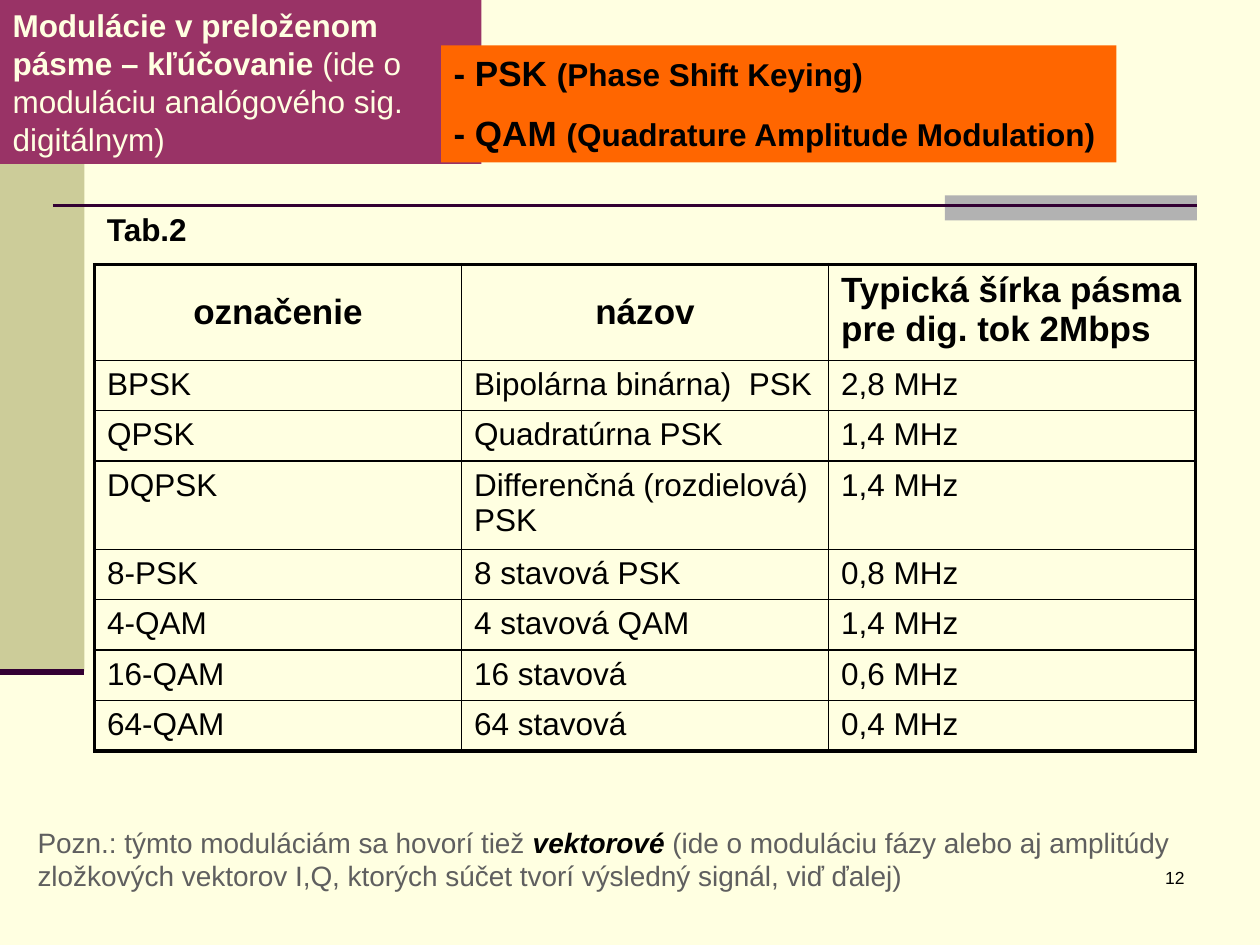
import lxml.etree
import pptx
import pptx.dml.color
import pptx.enum.shapes
import pptx.enum.text
import pptx.oxml
import pptx.oxml.ns
import pptx.util

Inches = pptx.util.Inches
Pt = pptx.util.Pt
ALIGN = pptx.enum.text.PP_ALIGN
ANCHOR = pptx.enum.text.MSO_ANCHOR

HEADER = ["označenie", "názov", "Typická šírka pásma pre dig. tok 2Mbps"]
MODULATIONS = [
    ["BPSK", "Bipolárna binárna)  PSK", "2,8 MHz"],
    ["QPSK", "Quadratúrna PSK", "1,4 MHz"],
    ["DQPSK", "Differenčná (rozdielová) PSK", "1,4 MHz"],
    ["8-PSK", "8 stavová PSK", "0,8 MHz"],
    ["4-QAM", "4 stavová QAM", "1,4 MHz"],
    ["16-QAM", "16 stavová", "0,6 MHz"],
    ["64-QAM", "64 stavová", "0,4 MHz"],
]
ROW_HEIGHTS = [0.76, 0.4, 0.4, 0.7, 0.4, 0.4, 0.4, 0.4]


def color(value):
    return pptx.dml.color.RGBColor.from_string(value)


def add_run(p, text, size=18, fill="000000", bold=False, italic=False):
    r = p.add_run()
    r.text = text
    r.font.name = "Arial"
    r.font.size = Pt(size)
    r.font.bold = bold
    r.font.italic = italic
    r.font.color.rgb = color(fill)


def set_border(cell, side, width):
    tag = "a:ln" + side
    ln = pptx.oxml.parse_xml(
        f'<{tag} {pptx.oxml.ns.nsdecls("a")} w="{Pt(width)}">'
        f'<a:solidFill><a:srgbClr val="000000"/></a:solidFill></{tag}>')
    cell._tc.get_or_add_tcPr().insert("LRTB".index(side), ln)


class SlideBuilder:
    thin, thick = 1, 2.25

    def __init__(self, prs, background):
        self.s = prs.slides.add_slide(prs.slide_layouts[1])
        self.s.background.fill.solid()
        self.s.background.fill.fore_color.rgb = color(background)

    def bar(self, x, y, w, h, fill):
        sp = self.s.shapes.add_shape(
            pptx.enum.shapes.MSO_SHAPE.RECTANGLE,
            Inches(x), Inches(y), Inches(w), Inches(h))
        sp.shadow.inherit = False
        sp.fill.solid()
        sp.fill.fore_color.rgb = color(fill)
        sp.line.fill.background()

    def rule(self, x1, x2, y, width):
        """Draw a horizontal line."""
        line = self.s.shapes.add_connector(
            pptx.enum.shapes.MSO_CONNECTOR.STRAIGHT,
            Inches(x1), Inches(y), Inches(x2), Inches(y))
        line.line.color.rgb = color("330033")
        line.line.width = Pt(width)
        lxml.etree.SubElement(line._element.spPr, pptx.oxml.ns.qn("a:effectLst"))

    def fill_text(self, tf, paragraphs, align=ALIGN.LEFT):
        """Fill a text frame; each paragraph is a list of (text, format) runs."""
        tf.word_wrap = True
        tf.auto_size = pptx.enum.text.MSO_AUTO_SIZE.NONE
        tf.vertical_anchor = ANCHOR.TOP
        for i, runs in enumerate(paragraphs):
            p = tf.add_paragraph() if i else tf.paragraphs[0]
            p.alignment = align
            p.space_before = Pt(10 if i else 0)
            for text, style in runs:
                add_run(p, text, **style)

    def text(self, x, y, w, h, runs, align=ALIGN.LEFT):
        box = self.s.shapes.add_textbox(Inches(x), Inches(y), Inches(w), Inches(h))
        self.fill_text(box.text_frame, [runs], align)

    def placeholder(self, index, x, y, w, h, fill, paragraphs):
        """Place and fill a placeholder in front of what is already drawn."""
        sp = self.s.placeholders[index]
        sp.left, sp.top, sp.width, sp.height = map(Inches, (x, y, w, h))
        sp.fill.solid()
        sp.fill.fore_color.rgb = color(fill)
        self.fill_text(sp.text_frame, paragraphs)
        for p in sp.text_frame.paragraphs:
            pPr = p._p.get_or_add_pPr()
            pPr.set("marL", "0")
            pPr.set("indent", "0")
            lxml.etree.SubElement(pPr, pptx.oxml.ns.qn("a:buNone"))
        self.s.shapes._spTree.append(sp._element)

    def table(self, x, y, w, rows, heights):
        n_rows, n_cols = len(rows), len(rows[0])
        table = self.s.shapes.add_table(
            n_rows, n_cols, Inches(x), Inches(y), Inches(w),
            Inches(sum(heights))).table
        table.first_row = table.horz_banding = False
        for row, height in zip(table.rows, heights):
            row.height = Inches(height)
        for i, row in enumerate(rows):
            for j, text in enumerate(row):
                cell = table.cell(i, j)
                cell.fill.background()
                p = cell.text_frame.paragraphs[0]
                add_run(p, text, size=18 if i else 20, bold=i == 0)
                if i == 0 and j < n_cols - 1:
                    p.alignment = ALIGN.CENTER
                    cell.vertical_anchor = ANCHOR.MIDDLE
                outer = {"L": j == 0, "R": j == n_cols - 1,
                         "T": i == 0, "B": i == n_rows - 1}
                for side, is_outer in outer.items():
                    set_border(cell, side, self.thick if is_outer else self.thin)


def main():
    prs = pptx.Presentation()
    prs.slide_width, prs.slide_height = Inches(10), Inches(7.5)
    b = SlideBuilder(prs, "FFFFE1")

    b.bar(0, 0, 0.67, 5.33, "CCCC99")
    b.bar(7.5, 1.55, 2, 0.2, "B2B2B2")
    b.rule(0.42, 9.5, 1.63, 1.5)
    b.rule(0, 0.67, 5.33, 3.5)
    b.text(7.42, 6.83, 2.08, 0.5, [("12", {"size": 10})], ALIGN.RIGHT)

    b.text(0.75, 1.62, 1.18, 0.4, [("Tab.2", {"bold": True})])
    b.table(0.75, 2.1, 8.74, [HEADER] + MODULATIONS, ROW_HEIGHTS)

    cream = {"fill": "FFFFE1"}
    b.placeholder(0, 0, 0, 3.82, 1.3, "993366", [[
        ("Modulácie v preloženom pásme – kľúčovanie ", {**cream, "bold": True}),
        ("(ide o moduláciu analógového sig. digitálnym)", cream)]])

    short, full = {"size": 20, "bold": True}, {"bold": True}
    b.placeholder(1, 3.5, 0.36, 5.36, 0.93, "FF6600", [
        [("- PSK ", short), ("(Phase Shift Keying)", full)],
        [("- QAM ", short), ("(Quadrature Amplitude Modulation)", full)]])

    note = {"size": 16, "fill": "5F5F5F"}
    b.text(0.2, 6.5, 9.37, 0.64, [
        ("Pozn.: týmto moduláciám sa hovorí tiež ", note),
        ("vektorové ", {"size": 16, "bold": True, "italic": True}),
        ("(ide o moduláciu fázy alebo aj amplitúdy zložkových vektorov I,Q, "
         "ktorých súčet tvorí výsledný signál, viď ďalej)", note)])

    prs.save("out.pptx")


if __name__ == "__main__":
    main()
